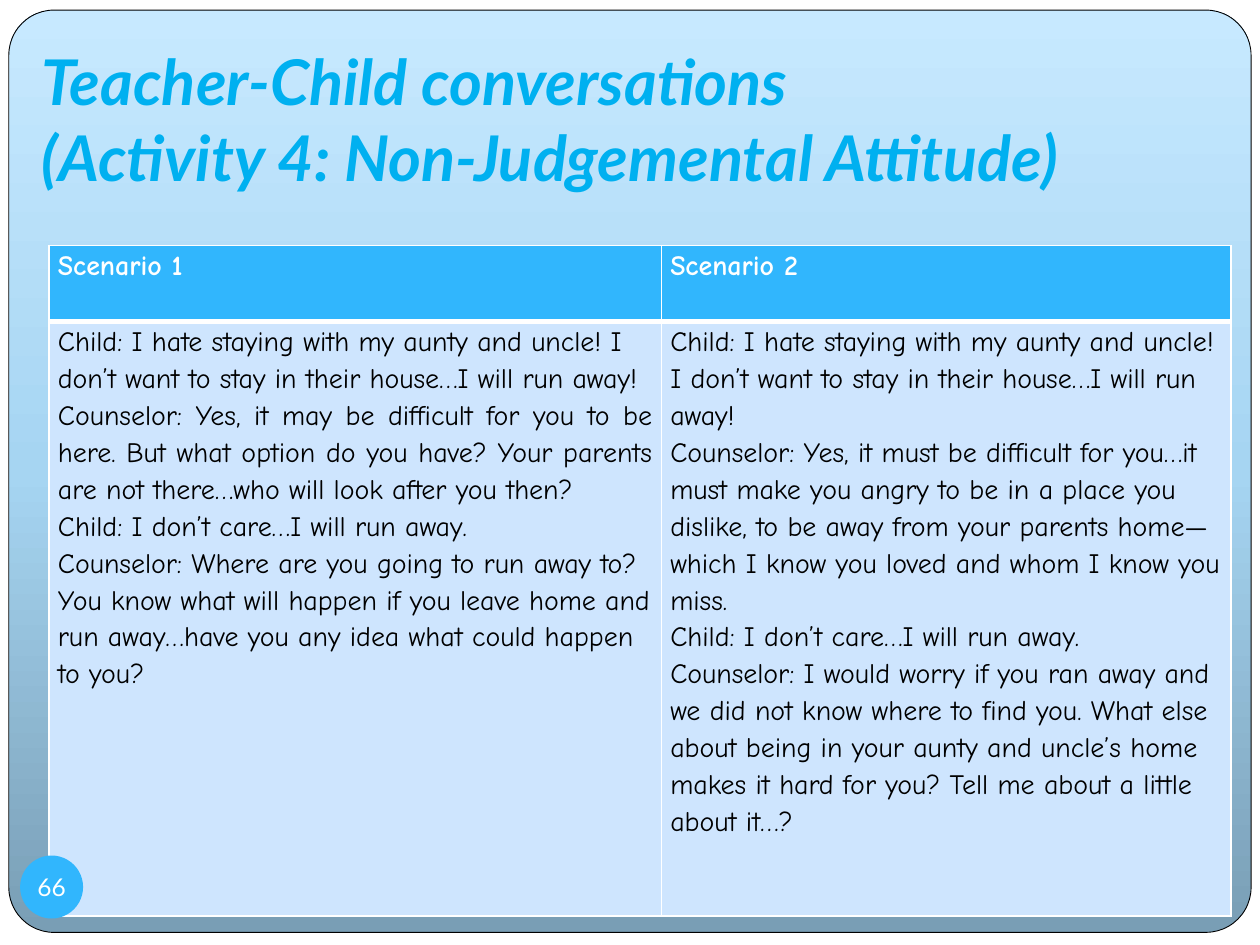
from copy import deepcopy
from dataclasses import dataclass

from lxml import etree
from pptx import Presentation
from pptx.dml.color import RGBColor
from pptx.enum import shapes, text
from pptx.oxml import ns
from pptx.util import Inches, Pt


@dataclass(frozen=True)
class Theme:
    heading_font: str = "Lato"
    body_font: str = "Comic Neue"
    title: str = "00B0F0"
    accent: str = "31B6FD"
    pale: str = "CEE5FE"
    white: str = "FFFFFF"
    black: str = "000000"
    gradient: tuple = ((0, "799EB5"), (0.5, "A6D5F2"), (1, "C7E9FF"))
    title_size: int = 36
    body_size: int = 16
    number_size: int = 14


THEME = Theme()
LEFT, JUSTIFY = text.PP_ALIGN.LEFT, text.PP_ALIGN.JUSTIFY

TITLE = "Teacher-Child conversations \v(Activity 4: Non-Judgemental Attitude)"
OPENING = ("Child: I hate staying with my aunty and uncle! I don’t want to stay in "
           "their house…I will run away!")
REPLY = "Child: I don’t care…I will run away."
SCENARIOS = {
    "Scenario 1": [
        (OPENING, LEFT),
        ("Counselor: Yes, it may be difficult for you to be here. But what option do "
         "you have? Your parents are not there…who will look after you then?", JUSTIFY),
        (REPLY, JUSTIFY),
        ("Counselor: Where are you going to run away to? You know what will happen if "
         "you leave home and run away…have you any idea what could happen to you?", LEFT),
    ],
    "Scenario 2": [
        (OPENING, LEFT),
        ("Counselor: Yes, it must be difficult for you…it must make you angry to be in "
         "a place you dislike, to be away from your parents home—which I know you "
         "loved and whom I know you miss.", LEFT),
        (REPLY, LEFT),
        ("Counselor: I would worry if you ran away and we did not know where to find "
         "you. What else about being in your aunty and uncle’s home makes it hard for "
         "you? Tell me about a little about it…?", LEFT),
    ],
}


def color(value):
    return RGBColor.from_string(value)


def write(paragraph, words, *, size, font, fill, bold=False, italic=False,
          align=LEFT, spacing=1.0):
    paragraph.text = words
    paragraph.alignment = align
    paragraph.line_spacing = spacing
    for run in paragraph.runs:
        run.font.name = font
        run.font.size = Pt(size)
        run.font.bold = bold
        run.font.italic = italic
        run.font.color.rgb = color(fill)


def set_margins(frame, left, top, right, bottom):
    frame.margin_left, frame.margin_top = Inches(left), Inches(top)
    frame.margin_right, frame.margin_bottom = Inches(right), Inches(bottom)


def add_panel(slide, box):
    panel = slide.shapes.add_shape(shapes.MSO_SHAPE.ROUNDED_RECTANGLE, *map(Inches, box))
    panel.shadow.inherit = False
    panel.adjustments[0] = 0.049
    panel.line.color.rgb = color(THEME.black)
    panel.line.width = Pt(0.5)
    panel.fill.gradient()
    panel.fill.gradient_angle = 90
    stop_list = next(panel.element.iter(ns.qn("a:gsLst")))
    stop_list.insert(1, deepcopy(stop_list[0]))
    for stop, (position, value) in zip(panel.fill.gradient_stops, THEME.gradient):
        stop.position = position
        stop.color.rgb = color(value)


def place_title(slide, box):
    title = slide.shapes.title
    title.left, title.top, title.width, title.height = map(Inches, box)
    frame = title.text_frame
    frame.auto_size = text.MSO_AUTO_SIZE.NONE
    frame.word_wrap = True
    frame.vertical_anchor = text.MSO_ANCHOR.BOTTOM
    set_margins(frame, 0.1, 0.05, 0.1, 0.1)
    write(frame.paragraphs[0], TITLE, size=THEME.title_size, font=THEME.heading_font,
          fill=THEME.title, bold=True, italic=True)
    slide.shapes.element.append(title.element)


def set_borders(cell, **widths):
    properties = cell._tc.get_or_add_tcPr()
    for index, side in enumerate("LRTB"):
        line = etree.Element(ns.qn(f"a:ln{side}"), w=str(Pt(widths.get(side, 1))))
        solid = etree.SubElement(line, ns.qn("a:solidFill"))
        etree.SubElement(solid, ns.qn("a:srgbClr"), val=THEME.white)
        properties.insert(index, line)


def fill_cell(cell, paragraphs, background, **style):
    cell.fill.solid()
    cell.fill.fore_color.rgb = color(background)
    set_margins(cell, 0.07, 0, 0.07, 0)
    frame = cell.text_frame
    for index, (words, align) in enumerate(paragraphs):
        paragraph = frame.add_paragraph() if index else frame.paragraphs[0]
        write(paragraph, words, size=THEME.body_size, font=THEME.body_font,
              align=align, spacing=1.15, **style)


def add_scenarios(slide, box):
    table = slide.shapes.add_table(2, len(SCENARIOS), *map(Inches, box)).table
    for column, width in zip(table.columns, (4.86, 4.52)):
        column.width = Inches(width)
    for row, height in zip(table.rows, (0.6, 4.72)):
        row.height = Inches(height)
    for index, (heading, dialogue) in enumerate(SCENARIOS.items()):
        header, body = table.cell(0, index), table.cell(1, index)
        fill_cell(header, [(heading, JUSTIFY)], THEME.accent, fill=THEME.white, bold=True)
        fill_cell(body, dialogue, THEME.pale, fill=THEME.black)
        set_borders(header, B=3)
        set_borders(body, T=3)


def add_page_number(slide, box):
    badge = slide.shapes.add_shape(shapes.MSO_SHAPE.OVAL, *map(Inches, box))
    badge.shadow.inherit = False
    badge.fill.solid()
    badge.fill.fore_color.rgb = color(THEME.accent)
    badge.line.fill.background()
    frame = badge.text_frame
    frame.word_wrap = False
    frame.vertical_anchor = text.MSO_ANCHOR.MIDDLE
    set_margins(frame, 0, 0, 0, 0)
    write(frame.paragraphs[0], "66", size=THEME.number_size, font=THEME.heading_font,
          fill=THEME.white, align=text.PP_ALIGN.CENTER)


def main():
    presentation = Presentation()
    presentation.slide_width, presentation.slide_height = Inches(10), Inches(7.5)
    slide = presentation.slides.add_slide(presentation.slide_layouts.get_by_name("Title Only"))
    slide.background.fill.solid()
    slide.background.fill.fore_color.rgb = color(THEME.white)
    add_panel(slide, (0.07, 0.08, 9.86, 7.32))
    place_title(slide, (0.23, 0, 9.77, 1.64))
    add_scenarios(slide, (0.39, 1.95, 9.38, 5.32))
    add_page_number(slide, (0.16, 6.79, 0.5, 0.5))
    presentation.save("out.pptx")


if __name__ == "__main__":
    main()
